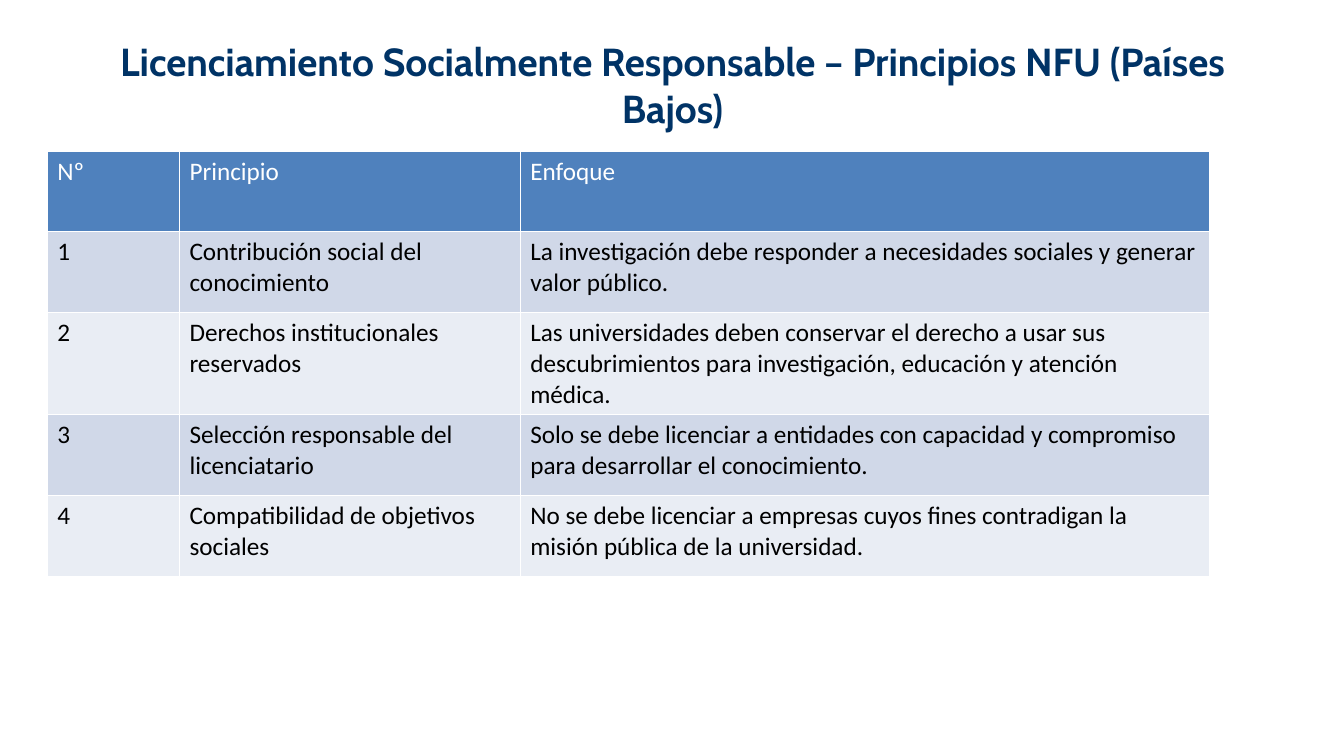
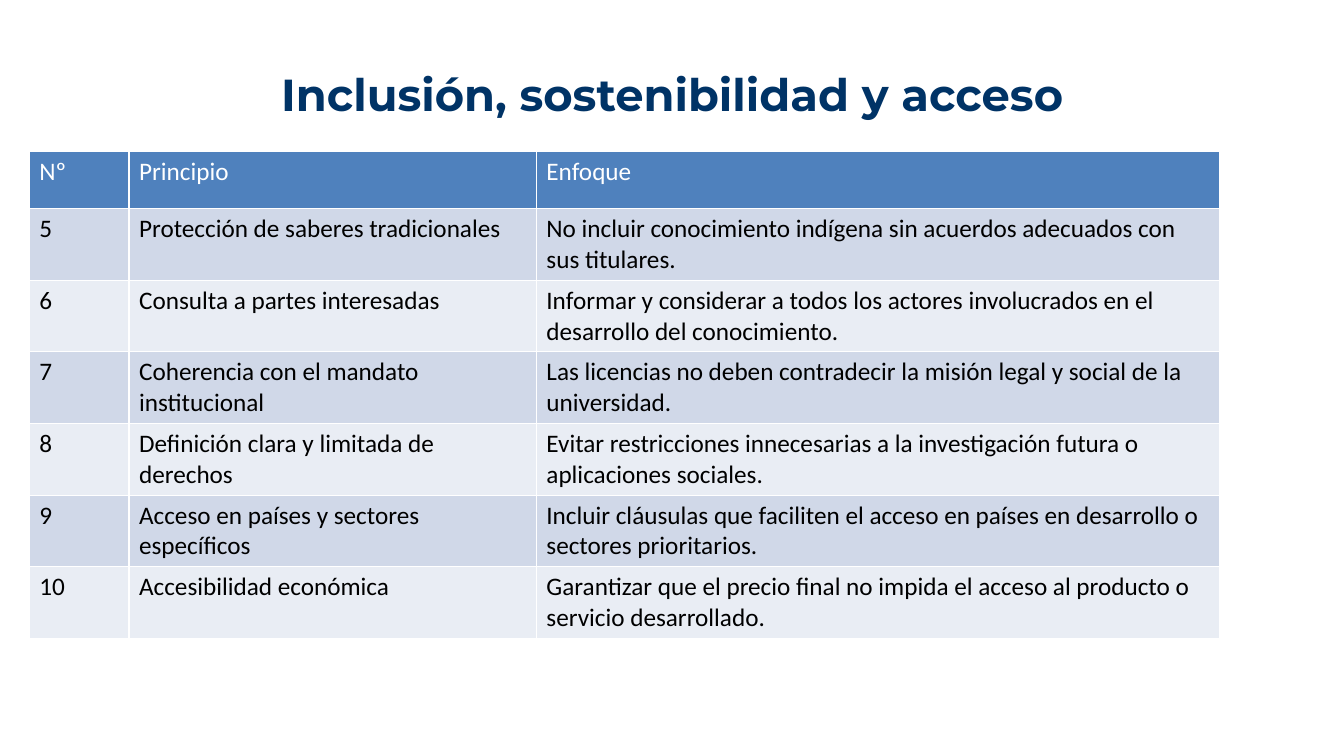
from dataclasses import dataclass

from lxml.etree import SubElement
from pptx import Presentation
from pptx.dml.color import RGBColor
from pptx.enum.text import MSO_ANCHOR as Anchor
from pptx.enum.text import MSO_AUTO_SIZE as AutoSize
from pptx.enum.text import PP_ALIGN as Align
from pptx.oxml.ns import qn
from pptx.util import Inches, Pt


@dataclass(frozen=True)
class Theme:
    title_color: str = "003366"
    header_fill: str = "4F81BD"
    header_text: str = "FFFFFF"
    body_text: str = "000000"
    band_fills: tuple = ("D0D8E8", "E9EDF4")
    border_color: str = "FFFFFF"
    border_width: float = 1
    body_font: str = "Calibri"
    body_size: float = 18


THEME = Theme()
TITLE_BOX = (0.67, 0.3, 12, 1.25)
TABLE_TOP = 1.5
HEADINGS = ("Nº", "Principio", "Enfoque")

SLIDES = (
    {
        "title": "Licenciamiento Socialmente Responsable – Principios NFU (Países Bajos)",
        "title_format": {"font": "Cabin", "size": 27.9},
        "title_bottom_inset": 0.23,
        "table_left": 0.47,
        "columns": (1.31, 3.38, 6.84),
        "header_height": 0.8,
        "row_height": 0.8,
        "first_number": 1,
        "principles": (
            ("Contribución social del conocimiento",
             "La investigación debe responder a necesidades sociales y generar valor público."),
            ("Derechos institucionales reservados",
             "Las universidades deben conservar el derecho a usar sus descubrimientos "
             "para investigación, educación y atención médica."),
            ("Selección responsable del licenciatario",
             "Solo se debe licenciar a entidades con capacidad y compromiso "
             "para desarrollar el conocimiento."),
            ("Compatibilidad de objetivos sociales",
             "No se debe licenciar a empresas cuyos fines contradigan la misión "
             "pública de la universidad."),
        ),
    },
    {
        "title": "Inclusión, sostenibilidad y acceso",
        "title_format": {"font": "Montserrat", "size": 32},
        "title_bottom_inset": 0.05,
        "table_left": 0.29,
        "columns": (0.99, 4.04, 6.78),
        "header_height": 0.57,
        "row_height": 0.71,
        "first_number": 5,
        "principles": (
            ("Protección de saberes tradicionales",
             "No incluir conocimiento indígena sin acuerdos adecuados con sus titulares."),
            ("Consulta a partes interesadas",
             "Informar y considerar a todos los actores involucrados en el "
             "desarrollo del conocimiento."),
            ("Coherencia con el mandato institucional",
             "Las licencias no deben contradecir la misión legal y social de la universidad."),
            ("Definición clara y limitada de derechos",
             "Evitar restricciones innecesarias a la investigación futura o "
             "aplicaciones sociales."),
            ("Acceso en países y sectores específicos",
             "Incluir cláusulas que faciliten el acceso en países en desarrollo "
             "o sectores prioritarios."),
            ("Accesibilidad económica",
             "Garantizar que el precio final no impida el acceso al producto o "
             "servicio desarrollado."),
        ),
    },
)


def write_text(frame, text, *, font, size, color, bold=False, align=Align.LEFT):
    paragraph = frame.paragraphs[0]
    paragraph.alignment = align
    run = paragraph.add_run()
    run.text = text
    run.font.name = font
    run.font.size = Pt(size)
    run.font.bold = bold
    run.font.color.rgb = RGBColor.from_string(color)


def add_borders(cell):
    properties = cell._tc.get_or_add_tcPr()
    for side in ("a:lnL", "a:lnR", "a:lnT", "a:lnB"):
        line = SubElement(properties, qn(side), w=str(Pt(THEME.border_width)))
        fill = SubElement(line, qn("a:solidFill"))
        SubElement(fill, qn("a:srgbClr"), val=THEME.border_color)


def place_title(slide, box, text, bottom_inset, text_format):
    title = slide.shapes.title
    title.left, title.top, title.width, title.height = map(Inches, box)
    frame = title.text_frame
    frame.word_wrap = True
    frame.auto_size = AutoSize.NONE
    frame.vertical_anchor = Anchor.MIDDLE
    frame.margin_bottom = Inches(bottom_inset)
    write_text(frame, text, color=THEME.title_color, bold=True,
               align=Align.CENTER, **text_format)


def place_table(slide, left, top, column_widths, row_heights, rows):
    table = slide.shapes.add_table(
        len(rows), len(column_widths), Inches(left), Inches(top),
        Inches(sum(column_widths)), Inches(sum(row_heights))).table
    for column, width in zip(table.columns, column_widths):
        column.width = Inches(width)
    for index, (row, height, texts) in enumerate(zip(table.rows, row_heights, rows)):
        row.height = Inches(height)
        is_header = index == 0
        fill = THEME.header_fill if is_header else THEME.band_fills[(index - 1) % 2]
        color = THEME.header_text if is_header else THEME.body_text
        for cell, text in zip(row.cells, texts):
            add_borders(cell)
            cell.fill.solid()
            cell.fill.fore_color.rgb = RGBColor.from_string(fill)
            write_text(cell.text_frame, text, font=THEME.body_font,
                       size=THEME.body_size, color=color)


def add_principles_slide(presentation, content):
    slide = presentation.slides.add_slide(
        presentation.slide_layouts.get_by_name("Title Only"))
    place_title(slide, TITLE_BOX, content["title"],
                content["title_bottom_inset"], content["title_format"])
    principles = content["principles"]
    numbered = [(str(number), *principle) for number, principle
                in enumerate(principles, content["first_number"])]
    heights = [content["header_height"]] + [content["row_height"]] * len(principles)
    place_table(slide, content["table_left"], TABLE_TOP, content["columns"],
                heights, [HEADINGS, *numbered])


def main():
    presentation = Presentation()
    presentation.slide_width = Inches(13.33)
    presentation.slide_height = Inches(7.5)
    for content in SLIDES:
        add_principles_slide(presentation, content)
    presentation.save("out.pptx")


if __name__ == "__main__":
    main()
